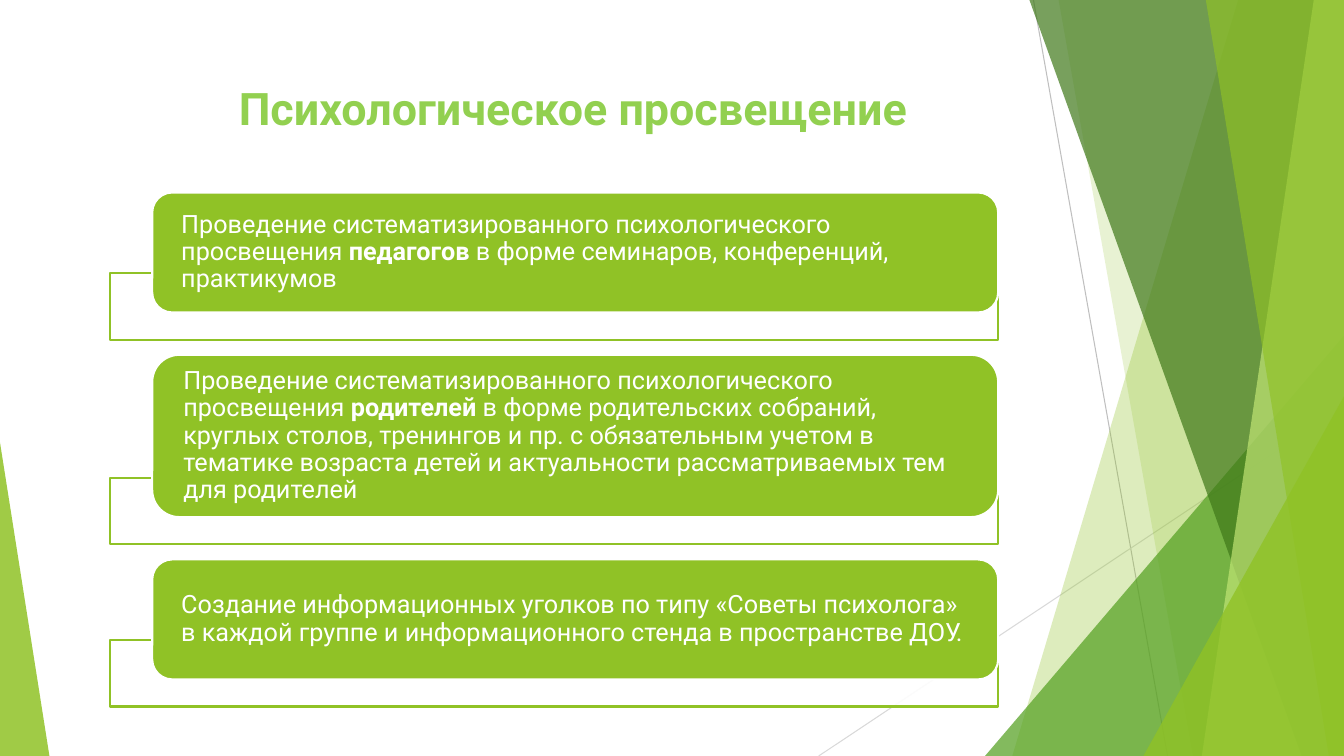
"""Build the slide on psychological education with three cards and a faceted green backdrop."""
from dataclasses import dataclass
from typing import Optional

from lxml import etree
from pptx import Presentation
from pptx import util as u
from pptx.dml.color import RGBColor
from pptx.enum import shapes, text
from pptx.oxml import ns

LIME = RGBColor(0x90, 0xC2, 0x26)
LEAF = RGBColor(0x54, 0xA0, 0x21)
FOREST = RGBColor(0x3F, 0x78, 0x19)
PALE_LIME = RGBColor(0xC0, 0xE4, 0x74)
TITLE_GREEN = RGBColor(0x92, 0xD0, 0x50)
WHITE = RGBColor(0xFF, 0xFF, 0xFF)
GREY = RGBColor(0xBF, 0xBF, 0xBF)
LIGHT_GREY = RGBColor(0xD9, 0xD9, 0xD9)

WIDTH, HEIGHT = 13.33, 7.5
CARD_LEFT, CARD_WIDTH, CARD_GAP = 1.51, 8.39, 0.42
FRAME_LEFT, FRAME_WIDTH, FRAME_HEIGHT, FRAME_OVERLAP = 1.09, 8.81, 0.66, 0.39


@dataclass(frozen=True)
class Ray:
    start: tuple[float, float]
    end: tuple[float, float]
    color: RGBColor


@dataclass(frozen=True)
class Facet:
    """Band reaching the right edge, bounded on the left by a slanted side."""
    top_x: float
    bottom_x: float
    color: RGBColor
    opacity: int


@dataclass(frozen=True)
class Wedge:
    """Right-angled triangle standing on the bottom edge."""
    left: float
    top: float
    width: float
    apex: float
    color: RGBColor
    opacity: int


@dataclass(frozen=True)
class Card:
    height: float
    message: str


RAYS = [
    Ray((10.25, 0), (11.58, HEIGHT), GREY),
    Ray((WIDTH, 4.03), (8.12, HEIGHT), LIGHT_GREY),
]
BACKDROP = [
    Facet(12.28, 10.04, LIME, 30),
    Facet(10.5, 11.83, LIME, 20),
    Wedge(9.77, 3.33, 3.56, 1, LEAF, 72),
    Facet(10.21, 12.91, FOREST, 70),
    Facet(13.03, 11.92, PALE_LIME, 70),
    Facet(11.96, 13.18, LIME, 65),
    Wedge(11.34, 3.93, 1.99, 1, LIME, 80),
    Wedge(0, 4.39, 0.49, 0, LIME, 85),
]
CARDS = [
    Card(1.19, "Проведение систематизированного психологического просвещения "
               "*педагогов* в форме семинаров, конференций, практикумов"),
    Card(1.61, "Проведение систематизированного психологического просвещения "
               "*родителей* в форме родительских собраний, круглых столов, "
               "тренингов и пр. с обязательным учетом в тематике возраста детей "
               "и актуальности рассматриваемых тем для родителей"),
    Card(1.19, "Создание информационных уголков по типу «Советы психолога» "
               "в каждой группе и информационного стенда в пространстве ДОУ."),
]


def write(frame, marked: str, *, size: int, color: RGBColor, align, anchor,
          inset: float, margin: float, spacing: float = 1.0) -> None:
    """Fill a text frame, setting the parts between asterisks in bold."""
    frame.word_wrap = True
    frame.auto_size = text.MSO_AUTO_SIZE.NONE
    frame.vertical_anchor = anchor
    frame.margin_left = frame.margin_right = u.Inches(inset)
    frame.margin_top = frame.margin_bottom = u.Inches(margin)
    paragraph = frame.paragraphs[0]
    paragraph.alignment = align
    paragraph.line_spacing = spacing
    for index, part in enumerate(marked.split("*")):
        if part:
            run = paragraph.add_run()
            run.text = part
            run.font.name = "Roboto"
            run.font.size = u.Pt(size)
            run.font.bold = index % 2 == 1
            run.font.color.rgb = color


def paint(shape, color: RGBColor, opacity: int = 100,
          outline: Optional[RGBColor] = None) -> None:
    """Give a shape its fill, opacity and outline."""
    shape.shadow.inherit = False
    shape.fill.solid()
    shape.fill.fore_color.rgb = color
    if opacity < 100:
        tint = shape._element.spPr.find(ns.qn("a:solidFill"))[0]
        etree.SubElement(tint, ns.qn("a:alpha"), val=str(opacity * 1000))
    if outline is None:
        shape.line.fill.background()
    else:
        shape.line.color.rgb = outline
        shape.line.width = u.Pt(1.5)


def add_box(slide, kind, left: float, top: float, width: float, height: float):
    """Add a preset shape measured in inches."""
    return slide.shapes.add_shape(kind, *map(u.Inches, (left, top, width, height)))


def draw_ray(slide, ray: Ray) -> None:
    """Draw a thin slanted line."""
    line = slide.shapes.add_connector(
        shapes.MSO_CONNECTOR.STRAIGHT, *map(u.Inches, ray.start + ray.end))
    line.line.color.rgb = ray.color
    line.line.width = u.Pt(0.75)
    etree.SubElement(line._element.spPr, ns.qn("a:effectLst"))


def draw_facet(slide, facet: Facet) -> None:
    """Draw a full-height translucent band."""
    corners = [(u.Inches(x), u.Inches(y)) for x, y in (
        (facet.top_x, 0), (WIDTH, 0), (WIDTH, HEIGHT), (facet.bottom_x, HEIGHT))]
    outline = slide.shapes.build_freeform(*corners[0])
    outline.add_line_segments(corners[1:], close=True)
    paint(outline.convert_to_shape(), facet.color, facet.opacity)


def draw_wedge(slide, wedge: Wedge) -> None:
    """Draw a translucent triangle."""
    triangle = add_box(slide, shapes.MSO_SHAPE.ISOSCELES_TRIANGLE,
                       wedge.left, wedge.top, wedge.width, HEIGHT - wedge.top)
    triangle.adjustments[0] = wedge.apex
    paint(triangle, wedge.color, wedge.opacity)


def draw_card(slide, card: Card, top: float) -> None:
    """Draw a rounded card over its outlined frame."""
    frame = add_box(slide, shapes.MSO_SHAPE.RECTANGLE, FRAME_LEFT,
                    top + card.height - FRAME_OVERLAP, FRAME_WIDTH, FRAME_HEIGHT)
    paint(frame, WHITE, 90, LIME)
    panel = add_box(slide, shapes.MSO_SHAPE.ROUNDED_RECTANGLE,
                    CARD_LEFT, top, CARD_WIDTH, card.height)
    paint(panel, LIME, outline=WHITE)
    write(panel.text_frame, card.message, size=18, color=WHITE,
          align=text.PP_ALIGN.LEFT, anchor=text.MSO_ANCHOR.MIDDLE,
          inset=0.23, margin=0, spacing=0.9)


def main() -> None:
    """Assemble and save the slide."""
    deck = Presentation()
    deck.slide_width, deck.slide_height = u.Inches(WIDTH), u.Inches(HEIGHT)
    slide = deck.slides.add_slide(deck.slide_layouts.get_by_name("Title Only"))

    for ray in RAYS:
        draw_ray(slide, ray)
    for piece in BACKDROP:
        if isinstance(piece, Facet):
            draw_facet(slide, piece)
        else:
            draw_wedge(slide, piece)

    title = slide.shapes.title
    title.left, title.top = u.Inches(1.78), u.Inches(0.13)
    title.width, title.height = u.Inches(7.81), u.Inches(1.25)
    write(title.text_frame, "*Психологическое просвещение*", size=32,
          color=TITLE_GREEN, align=text.PP_ALIGN.CENTER,
          anchor=text.MSO_ANCHOR.BOTTOM, inset=0.1, margin=0.05)

    top = 1.91
    for card in CARDS:
        draw_card(slide, card, top)
        top += card.height + CARD_GAP

    deck.save("out.pptx")


if __name__ == "__main__":
    main()
